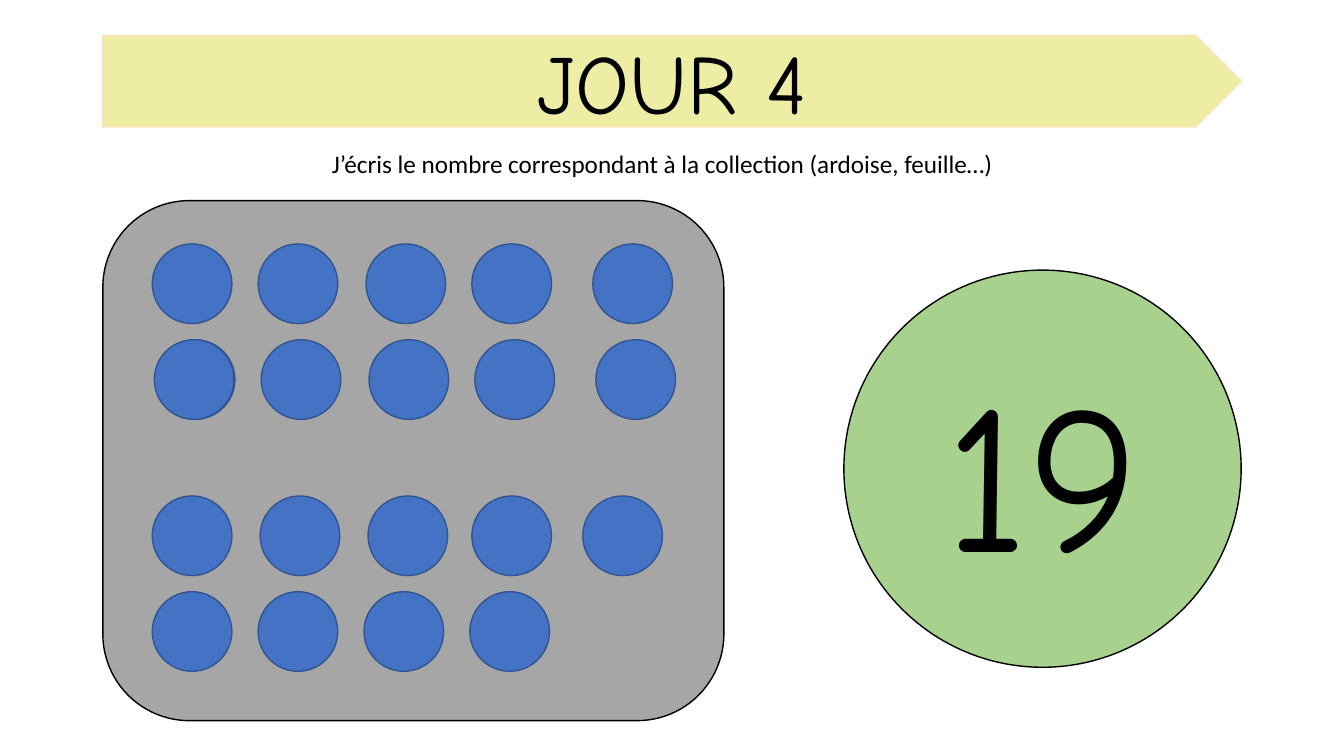
from pptx import Presentation
from pptx.dml.color import RGBColor
from pptx.enum.shapes import MSO_SHAPE
from pptx.enum.text import MSO_ANCHOR, PP_ALIGN
from pptx.util import Inches, Pt

PENTAGON = MSO_SHAPE.PENTAGON
ROUNDED = MSO_SHAPE.ROUNDED_RECTANGLE
OVAL = MSO_SHAPE.OVAL
CENTER = PP_ALIGN.CENTER
TOP = MSO_ANCHOR.TOP
MIDDLE = MSO_ANCHOR.MIDDLE

BLACK = RGBColor(0x00, 0x00, 0x00)
YELLOW = RGBColor(0xED, 0xED, 0xA6)
PEACH = RGBColor(0xFD, 0xE0, 0xB8)
GREY = RGBColor(0xA6, 0xA6, 0xA6)
GREEN = RGBColor(0xA9, 0xD1, 0x8E)
BLUE = RGBColor(0x44, 0x72, 0xC4)
DARK_BLUE = RGBColor(0x32, 0x54, 0x91)

TITLE_FONT = "Comic Neue"
BODY_FONT = "Calibri"

TOKEN_SIZE = 0.79
TOKEN_ROWS = [
    (2.42, [1.51, 2.56, 3.63, 4.68, 5.88]),
    (3.37, [1.54, 1.53, 2.59, 3.66, 4.71, 5.91]),
    (4.92, [1.51, 2.58, 3.65, 4.68, 5.78]),
    (5.87, [1.51, 2.56, 3.61, 4.66]),
]


def add_text(sp, text, *, size, font, color=BLACK, anchor=TOP):
    """Write one centred line of formatted text in a shape."""
    tf = sp.text_frame
    tf.word_wrap = True
    tf.vertical_anchor = anchor
    p = tf.paragraphs[0]
    p.alignment = CENTER
    r = p.add_run()
    r.text = text
    r.font.size = Pt(size)
    r.font.name = font
    r.font.color.rgb = color


def add_figure(s, kind, left, top, width, height, fill, line):
    """Add a flat preset shape with a one-point outline."""
    sp = s.shapes.add_shape(kind, Inches(left), Inches(top), Inches(width), Inches(height))
    sp.shadow.inherit = False
    sp.fill.solid()
    sp.fill.fore_color.rgb = fill
    sp.line.color.rgb = line
    sp.line.width = Pt(1)
    return sp


def add_label(s, left, top, width, height, text, **fmt):
    """Add a text box holding one formatted line."""
    sp = s.shapes.add_textbox(Inches(left), Inches(top), Inches(width), Inches(height))
    add_text(sp, text, **fmt)


def add_tokens(s):
    """Draw the rows of counting tokens."""
    for top, lefts in TOKEN_ROWS:
        for left in lefts:
            add_figure(s, OVAL, left, top, TOKEN_SIZE, TOKEN_SIZE, BLUE, DARK_BLUE)


def main():
    """Build the slide and save it."""
    prs = Presentation()
    prs.slide_width = Inches(13.33)
    prs.slide_height = Inches(7.5)
    s = prs.slides.add_slide(prs.slide_layouts[6])

    add_figure(s, PENTAGON, 1.02, 0.35, 11.29, 0.91, YELLOW, PEACH)
    add_label(s, 2.91, 0.25, 7.51, 1.11, "JOUR 4", size=60, font=TITLE_FONT)
    add_label(s, 2.67, 1.42, 7.8, 0.4,
              "J’écris le nombre correspondant à la collection (ardoise, feuille…)",
              size=18, font=BODY_FONT)

    add_figure(s, ROUNDED, 1.02, 1.99, 6.16, 5.16, GREY, BLACK)
    answer = add_figure(s, OVAL, 8.37, 2.68, 3.94, 3.94, GREEN, BLACK)
    add_text(answer, "19", size=150, font=TITLE_FONT, anchor=MIDDLE)
    add_tokens(s)

    prs.save("out.pptx")


if __name__ == "__main__":
    main()
